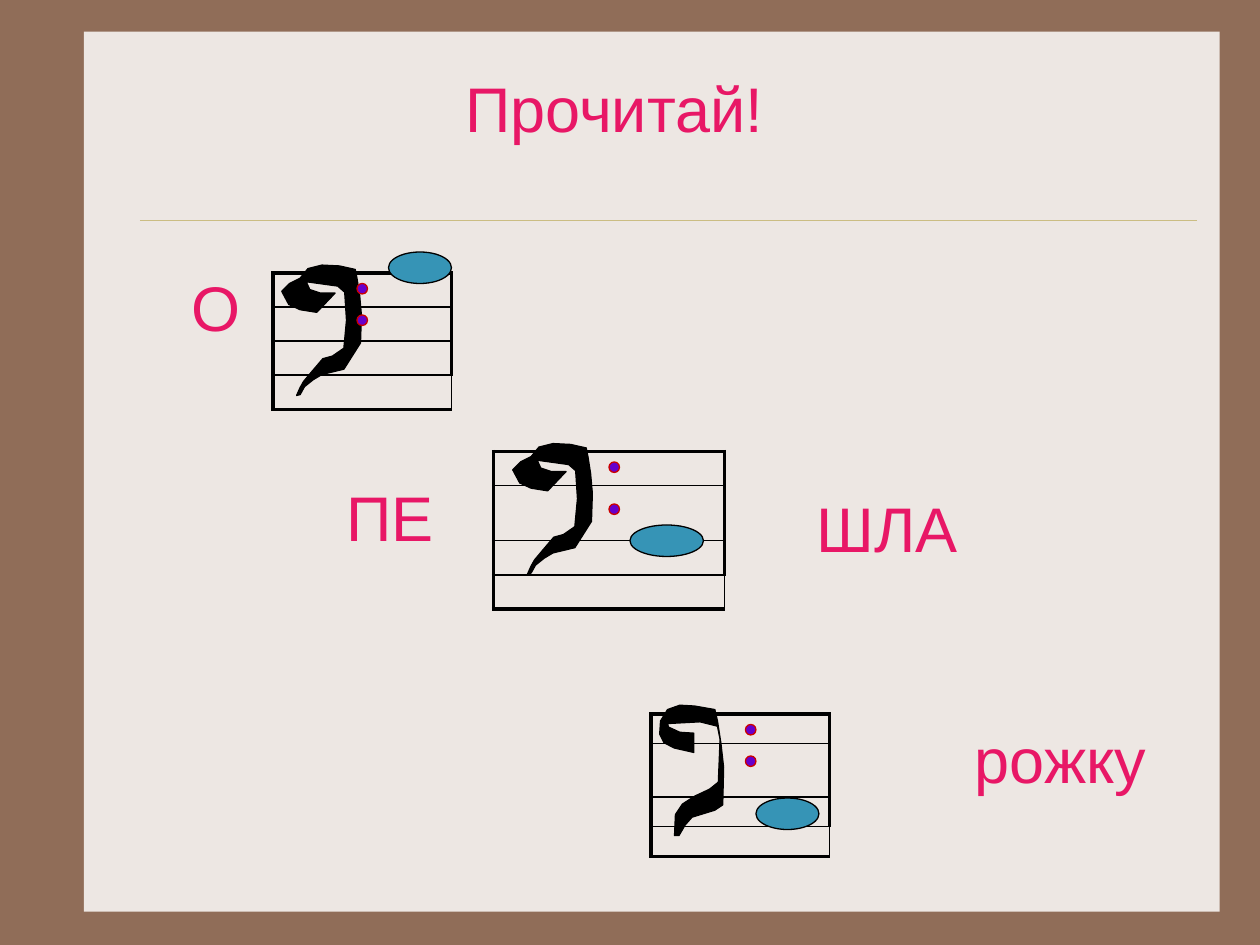
from dataclasses import dataclass

from lxml import etree
from pptx import Presentation
from pptx.dml.color import RGBColor
from pptx.enum.shapes import MSO_CONNECTOR, MSO_SHAPE
from pptx.enum.text import MSO_ANCHOR, MSO_AUTO_SIZE, PP_ALIGN
from pptx.oxml.ns import qn
from pptx.util import Pt

RECT, OVAL = MSO_SHAPE.RECTANGLE, MSO_SHAPE.OVAL
STRAIGHT = MSO_CONNECTOR.STRAIGHT
CENTER, TOP, NO_FIT = PP_ALIGN.CENTER, MSO_ANCHOR.TOP, MSO_AUTO_SIZE.NONE


@dataclass(frozen=True)
class Theme:
    frame: str = "906D58"
    panel: str = "EDE7E3"
    rule: str = "CBBD83"
    word: str = "E81766"
    ink: str = "000000"
    note: str = "3694B6"
    dot: str = "6600CC"
    dot_edge: str = "CC0000"
    font: str = "Arial"
    size: float = 36
    cell_size: int = 8
    thick: float = 2.25
    thin: float = 1
    edge: float = 0.75


T = Theme()
DOT = 6

WIDE_CLEF = [
    (0, 15.5), (4.5, 11), (10.5, 8), (15, 2.5), (23, 0.5), (33, 1), (42, 3),
    (43, 8), (44.5, 17.5), (45.5, 29), (45, 45), (35.5, 60), (23, 63),
    (18, 66), (13, 70), (10.5, 74.5), (8.5, 75), (10.5, 70.5), (12.5, 67),
    (17.5, 61), (23.5, 54), (29, 52.5), (35.5, 48), (37, 32), (36, 16),
    (32, 12.5), (14, 10), (16, 14.5), (22, 16.5), (30.5, 16.5), (20, 27.5),
    (10.5, 26), (4, 23),
]
NARROW_CLEF = [
    (0, 16.5), (0.5, 9), (4.5, 2.5), (11.5, 0), (20, 0.5), (31.5, 2.5),
    (33, 9), (35, 22), (36.5, 35.5), (36, 57), (31.5, 60), (18.5, 64),
    (14.5, 68.5), (11, 74.5), (8.5, 74.5), (9, 62.5), (13, 56.5), (20, 52),
    (28.5, 48), (33.5, 44), (34.5, 19.5), (33, 12), (23, 9.5), (4.5, 10.5),
    (5, 12.5), (11.5, 15.5), (19.5, 16), (19.5, 27), (8.5, 24.5), (2.5, 21.5),
]

STAVES = [
    dict(at=(156, 156), width=102, rows=[19.5] * 4, clef=WIDE_CLEF,
         clef_at=(161, 151), note=(222, 144, 36, 18),
         dots=[(204, 162), (204, 180)]),
    dict(at=(282, 258), width=132, rows=[19.5, 31.5, 19.5, 19.5],
         clef=WIDE_CLEF, clef_at=(293, 253), note=(360, 300, 42, 18),
         dots=[(348, 264), (348, 288)]),
    dict(at=(372, 408), width=102, rows=[17, 30.5, 17, 17], clef=NARROW_CLEF,
         clef_at=(377, 403), note=(432, 456, 36, 18),
         dots=[(426, 414), (426, 432)]),
]
WORDS = [
    ("О", (102, 150, 43, 84)),
    ("ПЕ", (192, 270, 62, 66)),
    ("ШЛА", (438, 276, 138, 60)),
    ("рожку", (516, 408, 180, 71)),
]


def rgb(value):
    return RGBColor.from_string(value)


def set_all(obj, **values):
    for name, value in values.items():
        setattr(obj, name, value)


def paint(sp, fill, line=None):
    sp.shadow.inherit = False
    sp.fill.solid()
    sp.fill.fore_color.rgb = rgb(fill)
    if line:
        sp.line.color.rgb = rgb(line)
        sp.line.width = Pt(T.edge)
    else:
        sp.line.fill.background()


def add_shape(s, kind, box, fill, line=None):
    paint(s.shapes.add_shape(kind, *map(Pt, box)), fill, line)


def add_rule(s, start, end):
    line = s.shapes.add_connector(STRAIGHT, *map(Pt, start + end))
    line.line.color.rgb = rgb(T.rule)
    line.line.width = Pt(0.25)
    etree.SubElement(line._element.spPr, qn("a:effectLst"))


def write_word(sp, text):
    tf = sp.text_frame
    set_all(tf, word_wrap=False, auto_size=NO_FIT, vertical_anchor=TOP)
    p = tf.paragraphs[0]
    p.alignment = CENTER
    r = p.add_run()
    r.text = text
    set_all(r.font, name=T.font, size=Pt(T.size), bold=False)
    r.font.color.rgb = rgb(T.word)


def set_title(s, text, box):
    sp = s.shapes.title
    set_all(sp, **dict(zip(("left", "top", "width", "height"), map(Pt, box))))
    write_word(sp, text)
    sp._element.getparent().append(sp._element)


def set_border(cell, side, width):
    ln = etree.SubElement(cell._tc.get_or_add_tcPr(), qn("a:ln" + side),
                          w=str(Pt(width)))
    fill = etree.SubElement(ln, qn("a:solidFill"))
    etree.SubElement(fill, qn("a:srgbClr"), val=T.ink)


def add_staff(s, at, width, rows):
    frame = s.shapes.add_table(len(rows), 1, *map(Pt, at + (width, sum(rows))))
    table = frame.table
    set_all(table, first_row=False, horz_banding=False)
    last = len(rows) - 1
    for i, height in enumerate(rows):
        table.rows[i].height = Pt(height)
        cell = table.cell(i, 0)
        set_all(cell, margin_top=0, margin_bottom=0)
        widths = {
            "L": T.thick,
            "R": T.thin if i == last else T.thick,
            "T": T.thick if i == 0 else T.thin,
            "B": T.thick if i == last else T.thin,
        }
        for side, line_width in widths.items():
            set_border(cell, side, line_width)
        cell.fill.background()
        p = cell.text_frame.paragraphs[0]
        etree.SubElement(p._p, qn("a:endParaRPr"), sz=str(T.cell_size * 100))


def add_clef(s, at, outline):
    points = [(Pt(x), Pt(y)) for x, y in outline]
    builder = s.shapes.build_freeform(*points[0])
    builder.add_line_segments(points[1:], close=True)
    paint(builder.convert_to_shape(*map(Pt, at)), T.ink, T.ink)


def main():
    prs = Presentation()
    set_all(prs, slide_width=Pt(720), slide_height=Pt(540))
    s = prs.slides.add_slide(prs.slide_layouts[5])
    s.background.fill.solid()
    s.background.fill.fore_color.rgb = rgb(T.frame)
    add_shape(s, RECT, (48, 18, 649, 503), T.panel)
    add_rule(s, (80, 126), (684, 126))
    set_title(s, "Прочитай!", (126, 36, 450, 78))
    for text, box in WORDS:
        write_word(s.shapes.add_textbox(*map(Pt, box)), text)
    for staff in STAVES:
        add_staff(s, staff["at"], staff["width"], staff["rows"])
        add_shape(s, OVAL, staff["note"], T.note, T.ink)
        add_clef(s, staff["clef_at"], staff["clef"])
        for dot in staff["dots"]:
            add_shape(s, OVAL, dot + (DOT, DOT), T.dot, T.dot_edge)
    prs.save("out.pptx")


if __name__ == "__main__":
    main()
